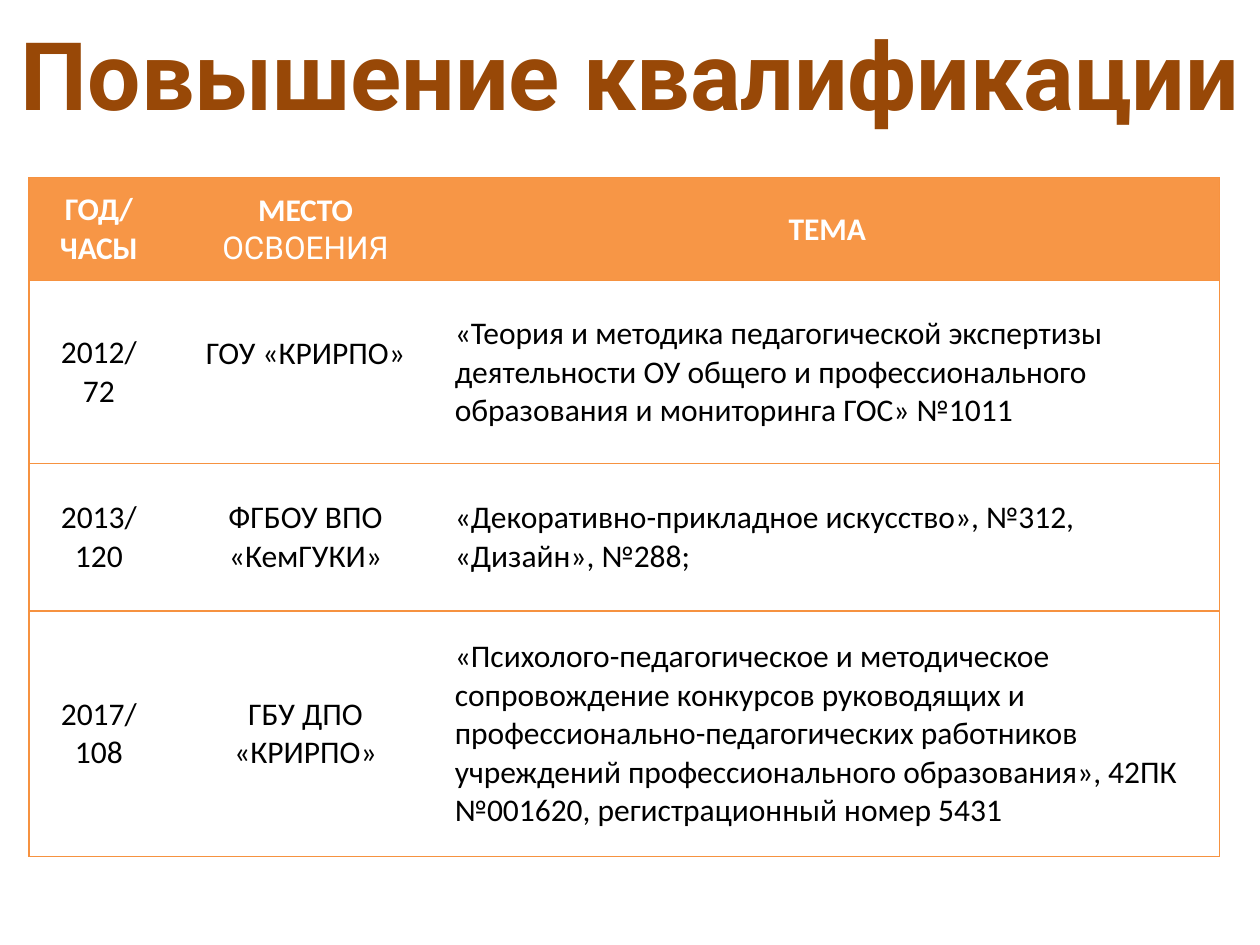
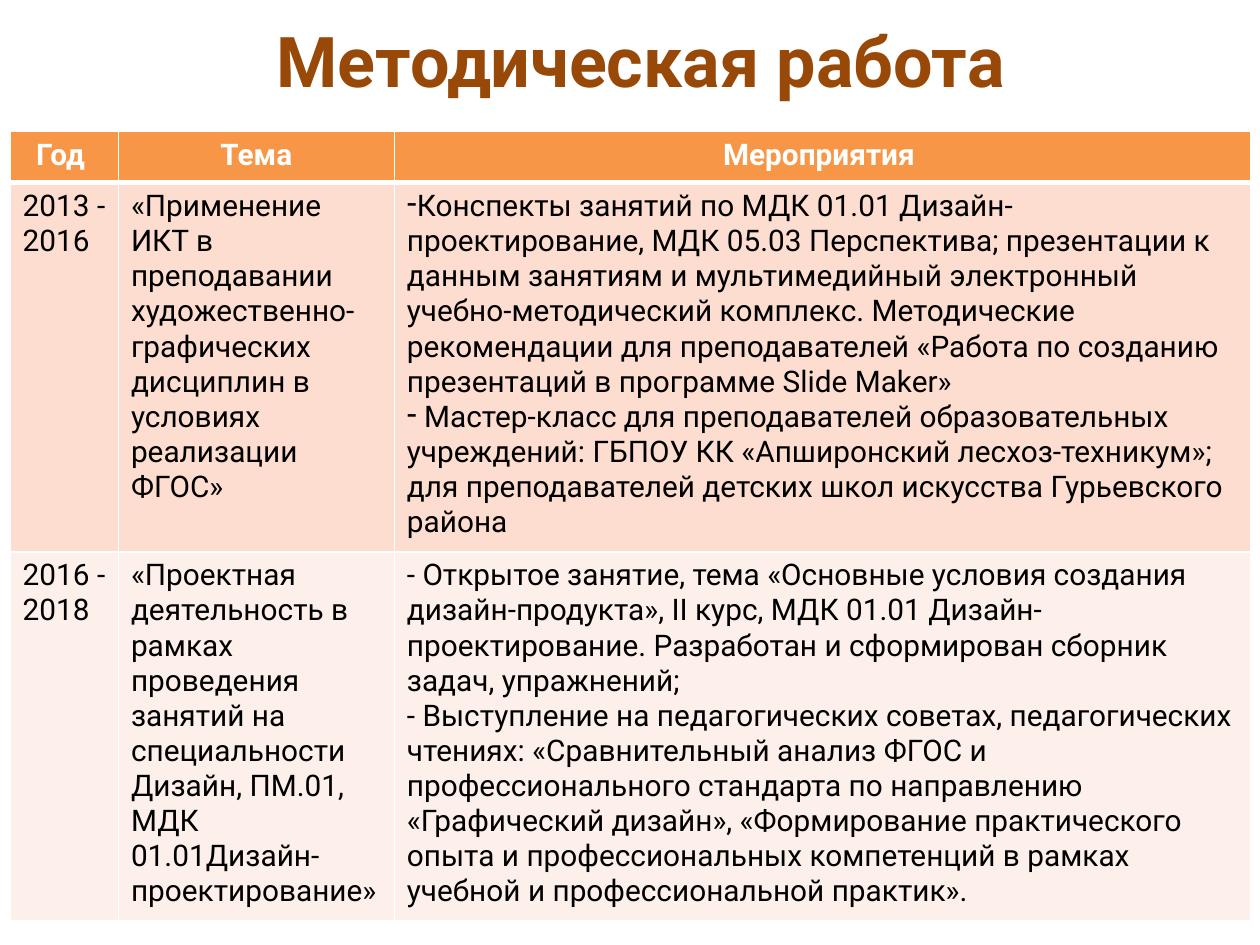
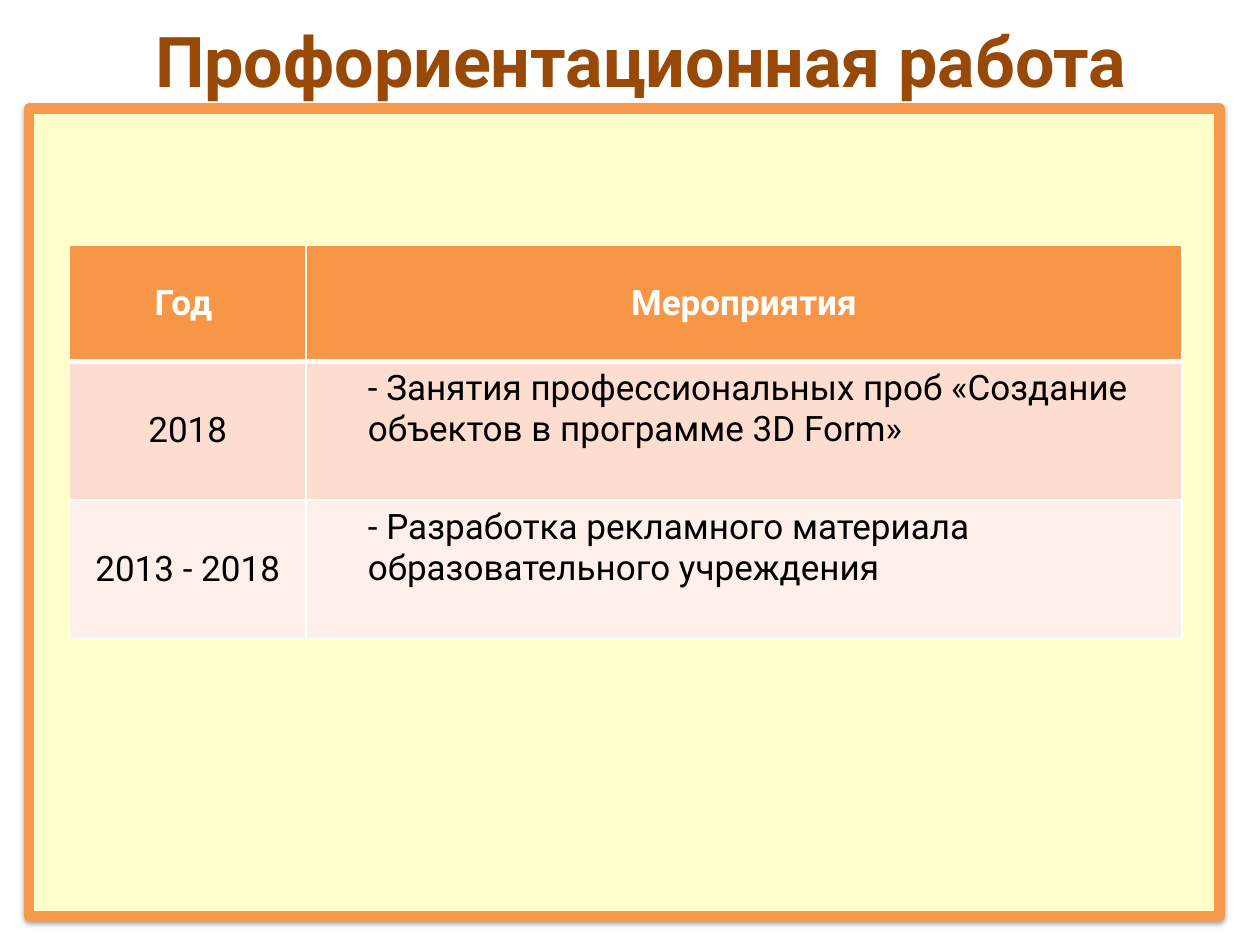
from lxml.etree import SubElement
from pptx import Presentation
from pptx.dml.color import RGBColor
from pptx.enum.shapes import MSO_SHAPE
from pptx.enum.text import MSO_ANCHOR, MSO_AUTO_SIZE, PP_ALIGN
from pptx.oxml import parse_xml
from pptx.oxml.ns import nsdecls, qn
from pptx.util import Inches, Pt

# Shared look
BROWN, ORANGE, WHITE, BLACK = "984807", "F79646", "FFFFFF", "000000"
BANDS = ["FCDDCF", "FDEFE9"]
GRID_LINE = "F69240"
LEFT, CENTER = PP_ALIGN.LEFT, PP_ALIGN.CENTER
TOP, MIDDLE = MSO_ANCHOR.TOP, MSO_ANCHOR.MIDDLE


def color(value):
    return RGBColor.from_string(value)


def add_border(cell, side, line_color, width):
    """Draw one side of a cell; a line_color of None hides it."""
    line = SubElement(cell._tc.get_or_add_tcPr(), qn(f"a:ln{side}"), w=str(Pt(width)))
    if line_color is None:
        SubElement(line, qn("a:noFill"))
    else:
        fill = SubElement(line, qn("a:solidFill"))
        SubElement(fill, qn("a:srgbClr"), val=line_color)


# Content and layout of each slide
training = {
    "title": "Повышение квалификации",
    "title_box": (-0.31, 0.08, 10.63, 1.01),
    "title_size": 54,
    "title_spacing": 1.0,
    "table_at": (0.23, 1.41),
    "columns": [1.11, 2.17, 6.17],
    "heights": [0.82, 1.45, 1.17, 1.95],
    "font": "Calibri",
    "size": 18,
    "alignments": [CENTER, CENTER, LEFT],
    "anchors": [MIDDLE] * 3,
    "banded": False,
    "rows": [
        ["ГОД/\nЧАСЫ", "МЕСТО ", "ТЕМА "],
        ["2012/\n72", "ГОУ «КРИРПО»",
         "«Теория и методика педагогической экспертизы деятельности ОУ общего и "
         "профессионального образования и мониторинга ГОС» №1011"],
        ["2013/\n120", "ФГБОУ ВПО «КемГУКИ»",
         "«Декоративно-прикладное искусство», №312, «Дизайн», №288;"],
        ["2017/\n108", "ГБУ ДПО «КРИРПО»",
         "«Психолого-педагогическое и методическое сопровождение конкурсов "
         "руководящих и профессионально-педагогических работников учреждений "
         "профессионального образования», 42ПК №001620, регистрационный номер 5431"],
    ],
}
methodical_work = {
    "title": "Методическая работа",
    "title_box": (-0.23, 0.27, 10.63, 0.58),
    "title_size": 40,
    "title_spacing": 0.7,
    "table_at": (0.08, 1.04),
    "columns": [0.86, 2.19, 6.8],
    "heights": [0.41, 2.93, 2.93],
    "font": "Roboto",
    "size": 17,
    "alignments": [LEFT] * 3,
    "anchors": [TOP] * 3,
    "banded": True,
    "rows": [
        ["Год ", "Тема", "Мероприятия "],
        ["2013 - 2016",
         "«Применение ИКТ в преподавании художественно-графических дисциплин в "
         "условиях реализации ФГОС»",
         "Конспекты занятий по МДК 01.01 Дизайн-проектирование, МДК 05.03 "
         "Перспектива; презентации к данным занятиям и мультимедийный электронный "
         "учебно-методический комплекс. Методические рекомендации для преподавателей "
         "«Работа по созданию презентаций в программе Slide Maker»\n"
         " Мастер-класс для преподавателей образовательных учреждений: ГБПОУ КК "
         "«Апширонский лесхоз-техникум»; для преподавателей детских школ искусства "
         "Гурьевского района"],
        ["2016 - 2018",
         "«Проектная деятельность в рамках проведения занятий на специальности "
         "Дизайн, ПМ.01, МДК 01.01Дизайн-проектирование»",
         "- Открытое занятие, тема «Основные условия создания дизайн-продукта», "
         "II курс, МДК 01.01 Дизайн-проектирование. Разработан и сформирован сборник "
         "задач, упражнений;\n"
         "- Выступление на педагогических советах, педагогических чтениях: "
         "«Сравнительный анализ ФГОС и профессионального стандарта по направлению "
         "«Графический дизайн», «Формирование практического опыта и профессиональных "
         "компетенций в рамках учебной и профессиональной практик»."],
    ],
}
career_guidance = {
    "title": "Профориентационная работа",
    "title_box": (-0.23, 0.27, 10.63, 0.58),
    "title_size": 40,
    "title_spacing": 0.7,
    "panel": (0.23, 0.86, 9.45, 6.41),
    "table_at": (0.55, 1.95),
    "columns": [1.88, 6.95],
    "heights": [0.92, 1.1, 1.1],
    "font": "Roboto",
    "size": 20,
    "alignments": [CENTER, LEFT],
    "anchors": [MIDDLE, TOP],
    "banded": True,
    "rows": [
        ["Год ", "Мероприятия"],
        ["2018", "- Занятия профессиональных проб «Создание объектов в программе 3D Form»"],
        ["2013 - 2018", "- Разработка рекламного материала образовательного учреждения"],
    ],
}

presentation = Presentation()
presentation.slide_width = Inches(10)
presentation.slide_height = Inches(7.5)
title_only = presentation.slide_layouts[5]
tables = []

for content in (training, methodical_work, career_guidance):
    slide = presentation.slides.add_slide(title_only)

    # Title
    title = slide.shapes.title
    for name, value in zip(("left", "top", "width", "height"), content["title_box"]):
        setattr(title, name, Inches(value))
    title.text_frame.text = content["title"]
    title.text_frame.auto_size = MSO_AUTO_SIZE.NONE
    title.text_frame.vertical_anchor = TOP
    paragraph = title.text_frame.paragraphs[0]
    paragraph.alignment = CENTER
    paragraph.line_spacing = content["title_spacing"]
    title_font = paragraph.runs[0].font
    title_format = {"name": "Roboto", "size": Pt(content["title_size"]), "bold": True}
    for name, value in title_format.items():
        setattr(title_font, name, value)
    title_font.color.rgb = color(BROWN)

    # Framed panel behind the table
    if "panel" in content:
        panel = slide.shapes.add_shape(MSO_SHAPE.RECTANGLE, *map(Inches, content["panel"]))
        panel.fill.solid()
        panel.fill.fore_color.rgb = color("FFFFCC")
        panel.line.color.rgb = color("F7994B")
        panel.line.width = Pt(6)
        panel._element.spPr.append(parse_xml(
            f'<a:effectLst {nsdecls("a")}><a:outerShdw blurRad="40000" dist="20000" '
            'dir="5400000" rotWithShape="0"><a:srgbClr val="000000">'
            '<a:alpha val="38000"/></a:srgbClr></a:outerShdw></a:effectLst>'))

    # Table
    rows, columns, heights = content["rows"], content["columns"], content["heights"]
    table = slide.shapes.add_table(
        len(rows), len(columns), *map(Inches, content["table_at"]),
        Inches(sum(columns)), Inches(sum(heights))).table
    table.horz_banding = False
    tables.append(table)
    for column, width in zip(table.columns, columns):
        column.width = Inches(width)
    for row, height in zip(table.rows, heights):
        row.height = Inches(height)

    for row_index, texts in enumerate(rows):
        header = row_index == 0
        for column_index, text in enumerate(texts):
            cell = table.cell(row_index, column_index)

            # Borders: white grid, or orange outline with row rules
            for side in "LRTB":
                if content["banded"]:
                    heavy = (header and side == "B") or (row_index == 1 and side == "T")
                    add_border(cell, side, WHITE, 3 if heavy else 1)
                else:
                    inner = (side == "L" and column_index > 0) or (
                        side == "R" and column_index < len(columns) - 1)
                    add_border(cell, side, None if inner else GRID_LINE, 0.75)

            # Fill
            if header or content["banded"]:
                cell.fill.solid()
                cell.fill.fore_color.rgb = color(ORANGE if header else BANDS[row_index - 1])
            else:
                cell.fill.background()

            # Text
            cell.vertical_anchor = MIDDLE if header and content is not methodical_work \
                else content["anchors"][column_index]
            cell.text_frame.text = text
            cell_format = {"name": content["font"], "size": Pt(content["size"]), "bold": header}
            for paragraph in cell.text_frame.paragraphs:
                paragraph.alignment = CENTER if header else content["alignments"][column_index]
                font = paragraph.runs[0].font
                for name, value in cell_format.items():
                    setattr(font, name, value)
                font.color.rgb = color(WHITE if header else BLACK)

training_table, methodical_table, guidance_table = tables

# Training: lighter second word in the header, raised first place name
place_run = training_table.cell(0, 1).text_frame.paragraphs[0].add_run()
place_run.text = "ОСВОЕНИЯ"
for name, value in {"name": "Roboto", "size": Pt(18), "bold": False}.items():
    setattr(place_run.font, name, value)
place_run.font.color.rgb = color(WHITE)
training_table.cell(1, 1).margin_bottom = Inches(0.35)

# Methodical work: dash bullets in the first list
for paragraph in methodical_table.cell(1, 2).text_frame.paragraphs:
    properties = paragraph._p.get_or_add_pPr()
    properties.set("marL", "0")
    properties.set("indent", "0")
    SubElement(properties, qn("a:buFontTx"))
    SubElement(properties, qn("a:buChar"), char="-")

# Career guidance: indented events
for row_index in (1, 2):
    paragraph = guidance_table.cell(row_index, 1).text_frame.paragraphs[0]
    paragraph._p.get_or_add_pPr().set("marL", str(Inches(0.39)))

presentation.save("out.pptx")
